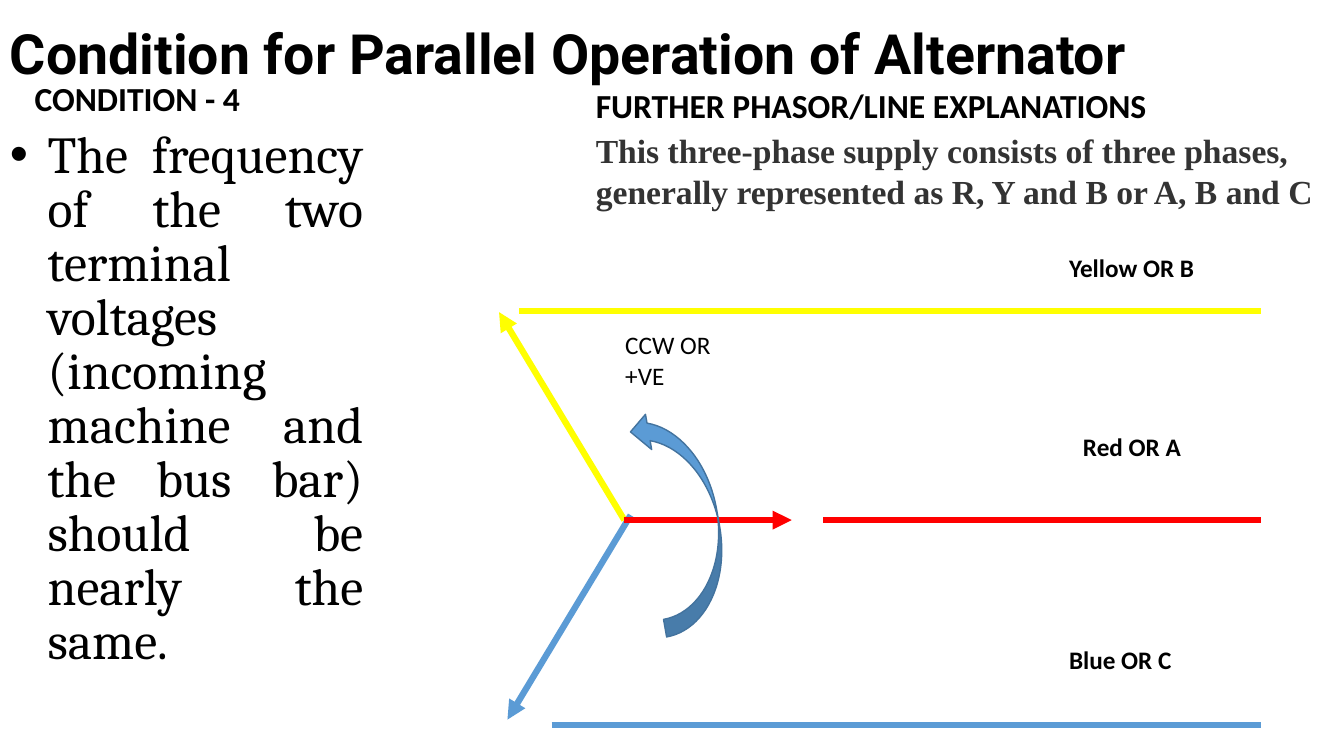
from lxml.etree import SubElement
from pptx import Presentation
from pptx.dml.color import RGBColor
from pptx.enum.shapes import MSO_CONNECTOR, MSO_SHAPE
from pptx.enum.text import MSO_ANCHOR, PP_ALIGN
from pptx.oxml.ns import qn
from pptx.util import Pt

BLACK, GREY = "000000", "333333"
RED, YELLOW, BLUE, DARK_BLUE = "FF0000", "FFFF00", "5B9BD5", "43739E"


def color(value):
    return RGBColor.from_string(value)


def add_text(s, box, text, size, font="Calibri", bold=True, fill=BLACK,
             anchor=MSO_ANCHOR.TOP, spacing=1.0):
    """Add a one-paragraph text box and return its paragraph."""
    tf = s.shapes.add_textbox(*map(Pt, box)).text_frame
    tf.word_wrap = True
    tf.vertical_anchor = anchor
    p = tf.paragraphs[0]
    p.line_spacing = spacing
    r = p.add_run()
    r.text = text
    r.font.name, r.font.size, r.font.bold = font, Pt(size), bold
    r.font.color.rgb = color(fill)
    return p


def add_line(s, start, end, stroke, arrow=False):
    line = s.shapes.add_connector(MSO_CONNECTOR.STRAIGHT, *map(Pt, (*start, *end)))
    line.line.color.rgb = color(stroke)
    line.line.width = Pt(4.5)
    spPr = line._element.spPr
    if arrow:
        SubElement(spPr.find(qn("a:ln")), qn("a:tailEnd"), type="triangle")
    SubElement(spPr, qn("a:effectLst"))


def add_title(s, x, y, w, h):
    add_text(s, (x, y, w, h), "Condition for Parallel Operation of Alternator",
             39.6, "Roboto", anchor=MSO_ANCHOR.MIDDLE, spacing=1.07)


def add_condition(s, x, y, w, h):
    add_text(s, (x + 17.6, y, 184, 35), "CONDITION - 4", 24,
             anchor=MSO_ANCHOR.BOTTOM, spacing=0.9)
    p = add_text(s, (x, y + 36, w, h - 36),
                 "The frequency of the two terminal voltages (incoming machine "
                 "and the bus bar) should be nearly the same.",
                 37, "Cambria", bold=False, spacing=0.87)
    p.alignment = PP_ALIGN.JUSTIFY
    pPr = p._p.get_or_add_pPr()
    indent = Pt(27)
    pPr.set("marL", str(indent))
    pPr.set("indent", str(-indent))
    SubElement(pPr, qn("a:buFont"), typeface="Arial")
    SubElement(pPr, qn("a:buChar"), char="•")


def add_explanation(s, x, y, w, h):
    add_text(s, (x, y, w, 32), "FURTHER PHASOR/LINE EXPLANATIONS", 24,
             anchor=MSO_ANCHOR.BOTTOM, spacing=0.8)
    add_text(s, (x, y + 29, w, h - 29),
             "This three-phase supply consists of three phases, "
             "generally represented as R, Y and B or A, B and C",
             24, "Times New Roman", fill=GREY)


def add_phasors(s, x, y, w, h):
    """Draw the three phasors, their phase lines and the rotation arrow."""
    apex = (x + 89.5, y + 194.5)
    add_line(s, (x + 94, y + 191), (x + 6, y + 337), BLUE, arrow=True)
    add_line(s, apex, (x, y + 46), YELLOW, arrow=True)
    add_line(s, apex, (x + 209, apex[1]), RED, arrow=True)

    phases = [  # name, colour, line left, line top, label left, label top
        ("Red OR A", RED, 231.5, 194.5, 410, 127.5),
        ("Yellow OR B", YELLOW, 14.5, 45, 400, 0),
        ("Blue OR C", BLUE, 37.5, h, 400, 279.5),
    ]
    for name, stroke, left, top, label_left, label_top in phases:
        add_line(s, (x + left, y + top), (x + w, y + top), stroke)
        add_text(s, (x + label_left, y + label_top, 140, 47), name, 18)

    turn = s.shapes.add_shape(MSO_SHAPE.CURVED_UP_ARROW,
                              Pt(x + 50), Pt(y + 168.5), Pt(161.5), Pt(51))
    turn.rotation = 260
    turn.shadow.inherit = False
    turn.fill.solid()
    turn.fill.fore_color.rgb = color(BLUE)
    turn.line.color.rgb = color(DARK_BLUE)
    turn.line.width = Pt(1)
    add_text(s, (x + 83, y + 55, 96, 81), "CCW OR +VE", 18, bold=False)


def main():
    prs = Presentation()
    prs.slide_width, prs.slide_height = Pt(960), Pt(540)
    s = prs.slides.add_slide(prs.slide_layouts[6])
    add_title(s, 0, 4, 960, 64)
    add_condition(s, 0, 53.5, 266.5, 486.5)
    add_explanation(s, 418.5, 60.5, 541.5, 94.5)
    add_phasors(s, 356.5, 177, 544.5, 341)
    prs.save("out.pptx")


if __name__ == "__main__":
    main()
